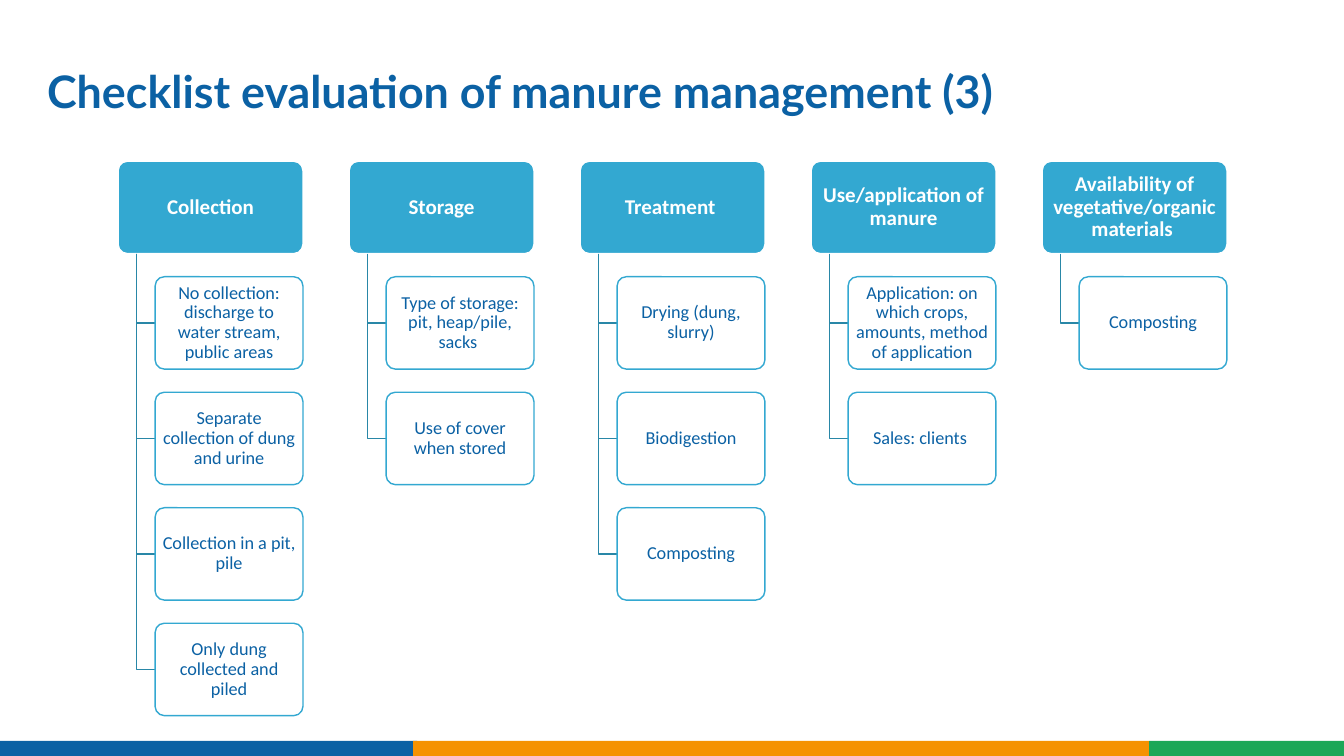
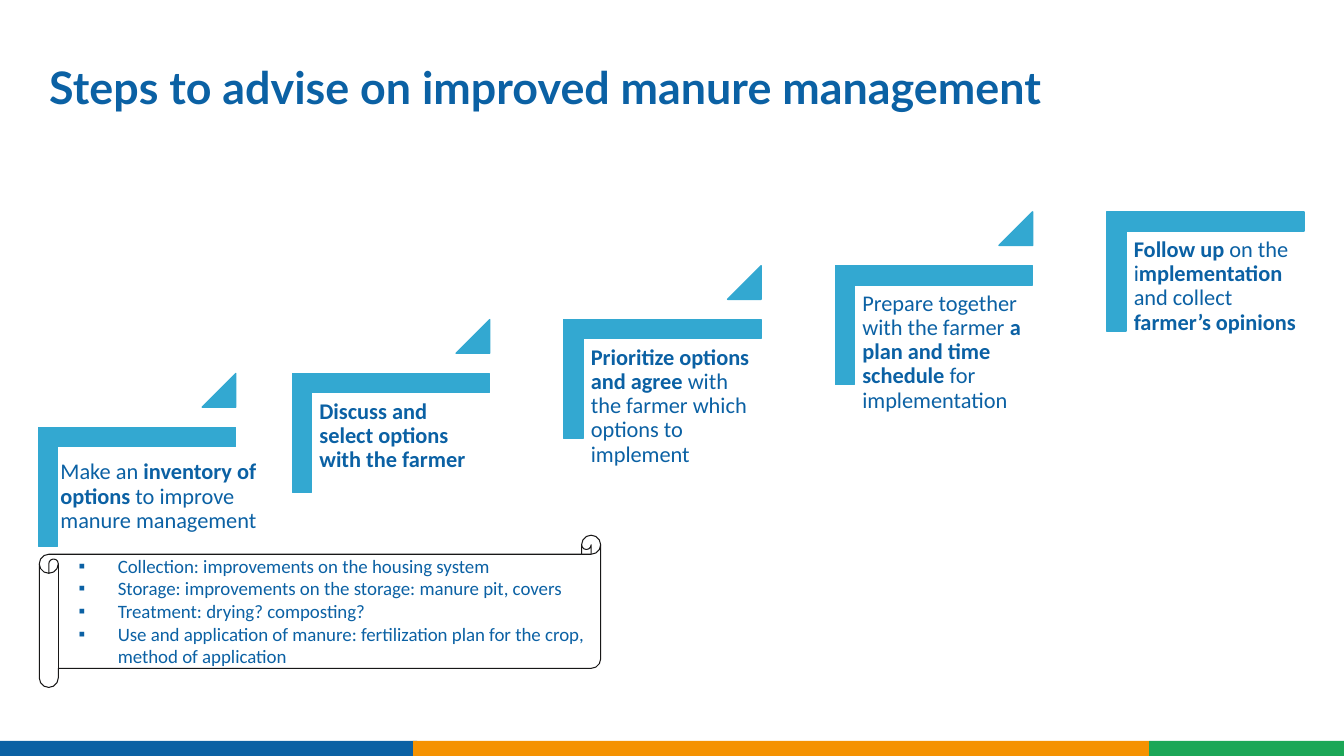
from dataclasses import dataclass

from lxml import etree
from pptx import Presentation
from pptx.dml.color import RGBColor
from pptx.enum import shapes, text
from pptx.oxml import ns
from pptx.util import Pt

# Shared look
BLUE = RGBColor(0x0B, 0x61, 0xA4)
ORANGE = RGBColor(0xF5, 0x92, 0x01)
GREEN = RGBColor(0x1B, 0xA7, 0x57)
SKY = RGBColor(0x33, 0xA8, 0xD1)
TEAL = RGBColor(0x29, 0x87, 0xA7)
INK = RGBColor(0x18, 0x17, 0x17)
WHITE = RGBColor(0xFF, 0xFF, 0xFF)
TITLE_FONT, BODY_FONT = "Lato", "Calibri"
SLIDE_W, SLIDE_H = 960, 540
BAND_TOP = 529.2
BANDS = ((0, 298, BLUE), (295.2, 525.6, ORANGE), (820.8, 139.2, GREEN))

MSO = shapes.MSO_SHAPE
LEFT, CENTER = text.PP_ALIGN.LEFT, text.PP_ALIGN.CENTER
TOP, MIDDLE = text.MSO_ANCHOR.TOP, text.MSO_ANCHOR.MIDDLE

# Checklist grid
COL_LEFT, COL_PITCH = 84.4, 165
HEAD_TOP, HEAD_W, BOX_H = 115.2, 132, 66
ROW_PITCH = BOX_H * 1.25
TRUNK_DX, ITEM_DX = HEAD_W * 0.1, HEAD_W * 0.2
ITEM_W = HEAD_W - ITEM_DX

# Staircase
CORNER_W, CORNER_H = 141, 85
STEP_TOP, STEP_RISE = 305.3, 38.5
STEP_LEFT, STEP_PITCH = 208.8, 193.9
TRIANGLE = 24


@dataclass(frozen=True)
class Column:
    head: str
    items: tuple[str, ...]


@dataclass(frozen=True)
class Run:
    text: str
    bold: bool = False


@dataclass(frozen=True)
class Step:
    left: float
    runs: tuple[Run, ...]
    text_dx: float = 14.4
    text_dy: float = 13.9
    text_w: float = 127.4


COLUMNS = (
    Column("Collection", (
        "No collection: discharge to water stream, public areas",
        "Separate collection of dung and urine",
        "Collection in a pit, pile",
        "Only dung collected and piled")),
    Column("Storage", (
        "Type of storage: pit, heap/pile, sacks ",
        "Use of cover when stored")),
    Column("Treatment ", (
        "Drying (dung, slurry)", "Biodigestion", "Composting")),
    Column("Use/application of manure", (
        "Application: on which crops, amounts, method of application",
        "Sales: clients ")),
    Column("Availability of vegetative/organic materials ", ("Composting",)),
)

STEPS = (
    Step(27.4, (Run("Make an "), Run("inventory of options ", True),
                Run("to improve manure management")),
         text_dx=10.8, text_dy=18.7, text_w=179.3),
    Step(STEP_LEFT, (Run("Discuss and select options with the farmer", True),)),
    Step(STEP_LEFT + STEP_PITCH, (
        Run("Prioritize options and agree ", True),
        Run("with the farmer which options to implement"))),
    Step(STEP_LEFT + 2 * STEP_PITCH, (
        Run("Prepare together with the farmer "),
        Run("a plan and time schedule ", True), Run("for implementation"))),
    Step(STEP_LEFT + 3 * STEP_PITCH, (
        Run("Follow up", True), Run(" on the i"), Run("mplementation", True),
        Run(" and collect "), Run("farmer’s opinions", True))),
)

IMPROVEMENTS = (
    "Collection: improvements on the housing system",
    "Storage: improvements on the storage: manure pit, covers",
    "Treatment: drying? composting?",
    "Use and application of manure: fertilization plan for the crop, "
    "method of application",
)


def add_bullet(p, indent: float, hang: float) -> None:
    pPr = p._p.get_or_add_pPr()
    pPr.set("marL", str(Pt(indent)))
    pPr.set("indent", str(-Pt(hang)))
    etree.SubElement(pPr, ns.qn("a:buFont")).set("typeface", "Arial")
    etree.SubElement(pPr, ns.qn("a:buChar")).set("char", "▪")


def write(sp, *paras: tuple[Run, ...], size: float, color=BLUE, font=BODY_FONT,
          align=LEFT, anchor=TOP, inset=(0, 0), spacing=0.9,
          bullets=False) -> None:
    """Fill a shape with paragraphs made of runs."""
    tf = sp.text_frame
    tf.word_wrap = True
    tf.vertical_anchor = anchor
    tf.margin_left = tf.margin_right = Pt(inset[0])
    tf.margin_top = tf.margin_bottom = Pt(inset[1])
    for i, runs in enumerate(paras):
        p = tf.add_paragraph() if i else tf.paragraphs[0]
        p.alignment, p.line_spacing = align, spacing
        if bullets:
            add_bullet(p, indent=42.5, hang=28)
        for run in runs:
            r = p.add_run()
            r.text = run.text
            r.font.name, r.font.size, r.font.bold = font, Pt(size), run.bold
            r.font.color.rgb = color


def add_shape(s, kind, x: float, y: float, w: float, h: float, fill=None,
              line=None, line_w: float = 1, adjust: tuple[float, ...] = ()):
    sp = s.shapes.add_shape(kind, Pt(x), Pt(y), Pt(w), Pt(h))
    sp.shadow.inherit = False
    for i, value in enumerate(adjust):
        sp.adjustments[i] = value
    if fill is None:
        sp.fill.background()
    else:
        sp.fill.solid()
        sp.fill.fore_color.rgb = fill
    if line is None:
        sp.line.fill.background()
    else:
        sp.line.color.rgb, sp.line.width = line, Pt(line_w)
    return sp


def add_text(s, x: float, y: float, w: float, h: float, runs: tuple[Run, ...],
             **fmt) -> None:
    write(s.shapes.add_textbox(Pt(x), Pt(y), Pt(w), Pt(h)), runs, **fmt)


def add_slide(prs, title: str, x: float, y: float, w: float):
    """Blank slide with the footer bands and a title."""
    s = prs.slides.add_slide(prs.slide_layouts[6])
    for left, width, color in BANDS:
        add_shape(s, MSO.RECTANGLE, left, BAND_TOP, width,
                  SLIDE_H - BAND_TOP, fill=color)
    add_text(s, x, y, w, 69, (Run(title, True),), size=32, font=TITLE_FONT,
             inset=(7.2, 3.6))
    return s


def add_card(s, x: float, y: float, w: float, label: Run, size: float,
             fill, line, color) -> None:
    sp = add_shape(s, MSO.ROUNDED_RECTANGLE, x, y, w, BOX_H, fill=fill,
                   line=line, adjust=(0.1,))
    write(sp, (label,), size=size, color=color, align=CENTER, anchor=MIDDLE,
          inset=(2.2, 1.5))


def add_elbow(s, x: float, top: float, bottom: float, end: float) -> None:
    builder = s.shapes.build_freeform(Pt(x), Pt(top))
    builder.add_line_segments(
        [(Pt(x), Pt(bottom)), (Pt(end), Pt(bottom))], close=False)
    sp = builder.convert_to_shape()
    sp.shadow.inherit = False
    sp.fill.background()
    sp.line.color.rgb, sp.line.width = TEAL, Pt(1)


def add_column(s, column: Column, x: float) -> None:
    add_card(s, x, HEAD_TOP, HEAD_W, Run(column.head, True), 15,
             fill=SKY, line=WHITE, color=WHITE)
    for row, item in enumerate(column.items, start=1):
        y = HEAD_TOP + row * ROW_PITCH
        add_elbow(s, x + TRUNK_DX, HEAD_TOP + BOX_H, y + BOX_H / 2, x + ITEM_DX)
        add_card(s, x + ITEM_DX, y, ITEM_W, Run(item), 13,
                 fill=WHITE, line=SKY, color=BLUE)


def add_corner(s, x: float, y: float) -> None:
    # The corner is turned a quarter, so it is placed by its centre
    shift = (CORNER_W - CORNER_H) / 2
    sp = add_shape(s, MSO.HALF_FRAME, x + shift, y - shift, CORNER_H, CORNER_W,
                   fill=SKY, line=SKY, adjust=(0.161, 0.161))
    # The shape list has no L shape: switch to the preset with the same handles
    sp._element.spPr.find(ns.qn("a:prstGeom")).set("prst", "corner")
    sp.rotation = 90


def add_step(s, step: Step, y: float, last: bool) -> None:
    add_corner(s, step.left, y)
    add_text(s, step.left + step.text_dx, y + step.text_dy, step.text_w, 111.6,
             step.runs, size=16, inset=(5, 5))
    if not last:
        add_shape(s, MSO.ISOSCELES_TRIANGLE, step.left + CORNER_W - TRIANGLE,
                  y - STEP_RISE, TRIANGLE, TRIANGLE, fill=SKY, line=SKY,
                  adjust=(1,))


def main() -> None:
    prs = Presentation()
    prs.slide_width, prs.slide_height = Pt(SLIDE_W), Pt(SLIDE_H)

    # Checklist
    s = add_slide(prs, "Checklist evaluation of manure management (3)",
                  26.6, 46.1, 828)
    for i, column in enumerate(COLUMNS):
        add_column(s, column, COL_LEFT + i * COL_PITCH)

    # Steps
    s = add_slide(prs, "Steps to advise on improved manure management",
                  28.1, 43.2, 749.5)
    for i, step in enumerate(STEPS):
        add_step(s, step, STEP_TOP - i * STEP_RISE, last=i == len(STEPS) - 1)
    scroll = add_shape(s, MSO.HORIZONTAL_SCROLL, 28.1, 382.3, 401, 108.7,
                       line=INK, line_w=0.75)
    write(scroll, *((Run(line),) for line in IMPROVEMENTS), size=13.5,
          spacing=1.0, bullets=True)

    prs.save("out.pptx")


if __name__ == "__main__":
    main()
